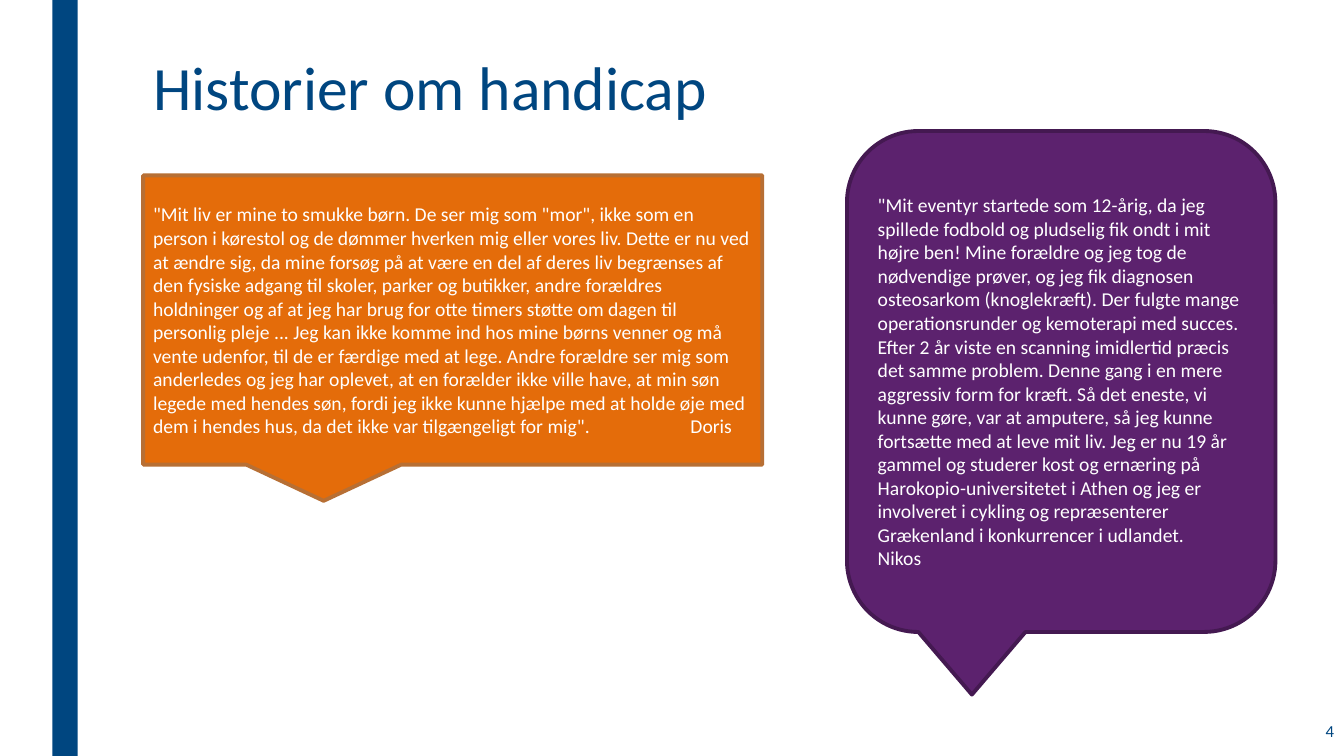
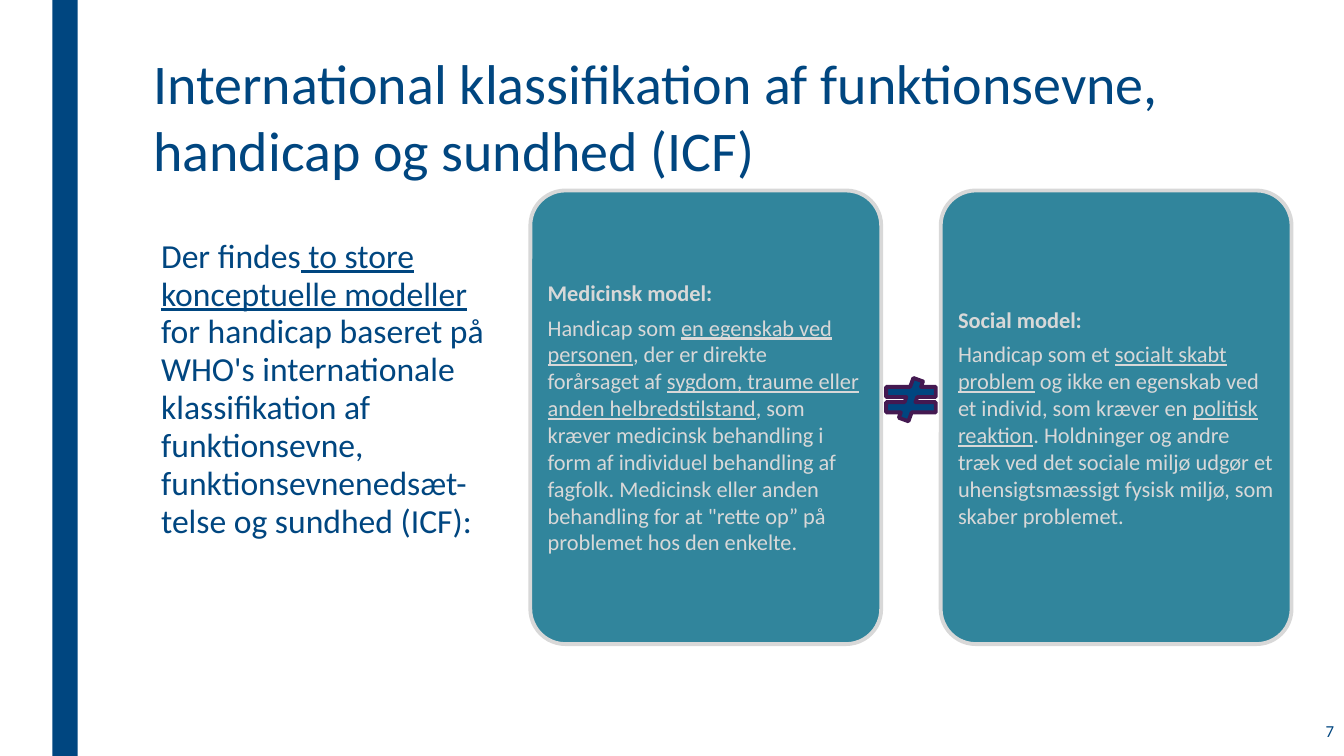
from lxml import etree
from pptx import Presentation
from pptx.dml.color import RGBColor
from pptx.enum.shapes import MSO_SHAPE
from pptx.enum.text import MSO_ANCHOR, MSO_AUTO_SIZE, PP_ALIGN
from pptx.oxml.ns import qn
from pptx.util import Inches, Pt

NAVY = RGBColor(0x00, 0x46, 0x80)
WHITE = RGBColor(0xFF, 0xFF, 0xFF)
ORANGE = RGBColor(0xE4, 0x6C, 0x0A)
BROWN = RGBColor(0xB7, 0x6F, 0x34)
PURPLE = RGBColor(0x5C, 0x22, 0x6E)
DARK_PURPLE = RGBColor(0x44, 0x19, 0x51)
TEAL = RGBColor(0x31, 0x85, 0x9C)
PALE_GREY = RGBColor(0xD8, 0xD8, 0xD8)

RECTANGLE = MSO_SHAPE.RECTANGLE
ROUNDED = MSO_SHAPE.ROUNDED_RECTANGLE
SQUARE_CALLOUT = MSO_SHAPE.RECTANGULAR_CALLOUT
ROUND_CALLOUT = MSO_SHAPE.ROUNDED_RECTANGULAR_CALLOUT
NOT_EQUAL = MSO_SHAPE.MATH_NOT_EQUAL
TOP, MIDDLE = MSO_ANCHOR.TOP, MSO_ANCHOR.MIDDLE
LEFT, RIGHT = PP_ALIGN.LEFT, PP_ALIGN.RIGHT
NO_AUTOFIT = MSO_AUTO_SIZE.NONE

FONT = "Calibri"
TITLE_ONLY = 5
BORDER = 2.75

DORIS_QUOTE = (
    '"Mit liv er mine to smukke børn. De ser mig som "mor", ikke som en person i '
    "kørestol og de dømmer hverken mig eller vores liv. Dette er nu ved at ændre sig, "
    "da mine forsøg på at være en del af deres liv begrænses af den fysiske adgang til "
    "skoler, parker og butikker, andre forældres holdninger og af at jeg har brug for "
    "otte timers støtte om dagen til personlig pleje ... Jeg kan ikke komme ind hos "
    "mine børns venner og må vente udenfor, til de er færdige med at lege. Andre "
    "forældre ser mig som anderledes og jeg har oplevet, at en forælder ikke ville "
    "have, at min søn legede med hendes søn, fordi jeg ikke kunne hjælpe med at holde "
    'øje med dem i hendes hus, da det ikke var tilgængeligt for mig". \tDoris'
)
NIKOS_QUOTE = (
    '"Mit eventyr startede som 12-årig, da jeg spillede fodbold og pludselig fik ondt '
    "i mit højre ben! Mine forældre og jeg tog de nødvendige prøver, og jeg fik "
    "diagnosen osteosarkom (knoglekræft). Der fulgte mange operationsrunder og "
    "kemoterapi med succes. Efter 2 år viste en scanning imidlertid præcis det samme "
    "problem. Denne gang i en mere aggressiv form for kræft. Så det eneste, vi kunne "
    "gøre, var at amputere, så jeg kunne fortsætte med at leve mit liv. Jeg er nu 19 år "
    "gammel og studerer kost og ernæring på Harokopio-universitetet i Athen og jeg er "
    "involveret i cykling og repræsenterer Grækenland i konkurrencer i udlandet.\vNikos"
)

# In these lists every second piece is underlined.
INTRO = [
    "Der findes", " to store konceptuelle modeller",
    " for handicap baseret på WHO's internationale klassifikation af funktionsevne, "
    "funktionsevnenedsæt-telse og sundhed (ICF):",
]
MODELS = [
    ("Medicinsk model:", [
        "Handicap som ", "en egenskab ved personen", ", der er direkte forårsaget af ",
        "sygdom, traume eller anden helbredstilstand",
        ", som kræver medicinsk behandling i form af individuel behandling af fagfolk. "
        'Medicinsk eller anden behandling for at "rette op” på problemet hos den enkelte.',
    ]),
    ("Social model:", [
        "Handicap som et ", "socialt skabt problem",
        " og ikke en egenskab ved et individ, som kræver en ", "politisk reaktion",
        ". Holdninger og andre træk ved det sociale miljø udgør et uhensigtsmæssigt "
        "fysisk miljø, som skaber problemet.",
    ]),
]


def inches(box):
    return [Inches(length) for length in box]


def style_paragraph(para, size, color, align=LEFT):
    para.alignment = align
    for span in para.runs:
        span.font.name = FONT
        span.font.size = Pt(size)
        span.font.color.rgb = color


def write_pieces(para, pieces, size, color):
    """Write the pieces as runs, underlining every second one."""
    for index, piece in enumerate(pieces):
        span = para.add_run()
        span.text = piece
        span.font.underline = index % 2 == 1
    style_paragraph(para, size, color)


def add_figure(slide, kind, box, fill, line=None):
    shape = slide.shapes.add_shape(kind, *inches(box))
    shape.shadow.inherit = False
    shape.fill.solid()
    shape.fill.fore_color.rgb = fill
    if line is None:
        shape.line.fill.background()
    else:
        shape.line.color.rgb = line
        shape.line.width = Pt(BORDER)
    return shape


def add_text_frame(slide, box, anchor):
    frame = slide.shapes.add_textbox(*inches(box)).text_frame
    frame.word_wrap = True
    frame.vertical_anchor = anchor
    return frame


def add_page(deck, title, size, top, number, line_spacing=1.0):
    """Add a slide with the shared title style and page number."""
    slide = deck.slides.add_slide(deck.slide_layouts[TITLE_ONLY])
    heading = slide.shapes.title
    heading.left, heading.top, heading.width, heading.height = inches((1.42, top, 10.5, 1.1))
    frame = heading.text_frame
    frame.text = title
    frame.word_wrap = True
    frame.auto_size = NO_AUTOFIT
    frame.vertical_anchor = TOP
    frame.paragraphs[0].line_spacing = line_spacing
    style_paragraph(frame.paragraphs[0], size, NAVY)

    para = add_text_frame(slide, (11.58, 7.03, 1.75, 0.44), MIDDLE).paragraphs[0]
    para.text = str(number)
    style_paragraph(para, 12, NAVY, RIGHT)
    return slide


def add_side_band(slide):
    """Place the band in the slide's layout, so that every slide shows it."""
    band = add_figure(slide, RECTANGLE, (0.52, 0, 0.25, 7.5), NAVY)
    slide.slide_layout.shapes.element.append(band.element)


def add_callout(slide, kind, box, fill, line, quote, tab=None):
    frame = add_figure(slide, kind, box, fill, line).text_frame
    frame.word_wrap = True
    frame.vertical_anchor = MIDDLE
    para = frame.paragraphs[0]
    para.text = quote
    if tab is not None:
        properties = para._p.get_or_add_pPr()
        stops = etree.SubElement(properties, qn("a:tabLst"))
        etree.SubElement(stops, qn("a:tab"), pos=str(Inches(tab)), algn="l")
    style_paragraph(para, 14, WHITE)


def add_model_card(slide, box, heading, pieces):
    card = add_figure(slide, ROUNDED, box, TEAL, PALE_GREY)
    card.adjustments[0] = 0.1
    frame = card.text_frame
    frame.word_wrap = True
    frame.vertical_anchor = MIDDLE
    frame.margin_left = frame.margin_right = Inches(0.07)
    frame.margin_top = frame.margin_bottom = Inches(0.07)
    para = frame.paragraphs[0]
    para.text = heading
    para.space_after = Pt(5.5)
    style_paragraph(para, 16, PALE_GREY)
    para.runs[0].font.bold = True
    write_pieces(frame.add_paragraph(), pieces, 16, PALE_GREY)


def add_model_pair(slide, left, top, width, height, gap):
    """Place the two model cards with the inequality sign between them."""
    for index, (heading, pieces) in enumerate(MODELS):
        box = (left + index * (width + gap), top, width, height)
        add_model_card(slide, box, heading, pieces)
    sign_width, sign_height = 0.67, 0.43
    sign_left = left + width + (gap - sign_width) / 2
    sign_top = 3.75
    add_figure(slide, NOT_EQUAL, (sign_left, sign_top, sign_width, sign_height),
               NAVY, DARK_PURPLE)


def add_stories_page(deck):
    slide = add_page(deck, "Historier om handicap", 44, 0.52, 4, 0.89)
    add_side_band(slide)
    add_callout(slide, SQUARE_CALLOUT, (1.42, 1.74, 6.14, 2.87),
                ORANGE, BROWN, DORIS_QUOTE, tab=5.33)
    add_callout(slide, ROUND_CALLOUT, (8.4, 1.3, 4.25, 4.97),
                PURPLE, DARK_PURPLE, NIKOS_QUOTE)


def add_models_page(deck):
    title = "International klassifikation af funktionsevne, handicap og sundhed (ICF)"
    slide = add_page(deck, title, 40, 0.43, 7)
    para = add_text_frame(slide, (1.5, 2.31, 3.43, 3.22), TOP).paragraphs[0]
    para.line_spacing = 0.94
    write_pieces(para, INTRO, 24, NAVY)
    add_model_pair(slide, 5.26, 1.89, 3.48, 4.5, 0.59)


def main():
    deck = Presentation()
    deck.slide_width, deck.slide_height = Inches(13.33), Inches(7.5)
    add_stories_page(deck)
    add_models_page(deck)
    deck.save("out.pptx")


if __name__ == "__main__":
    main()
